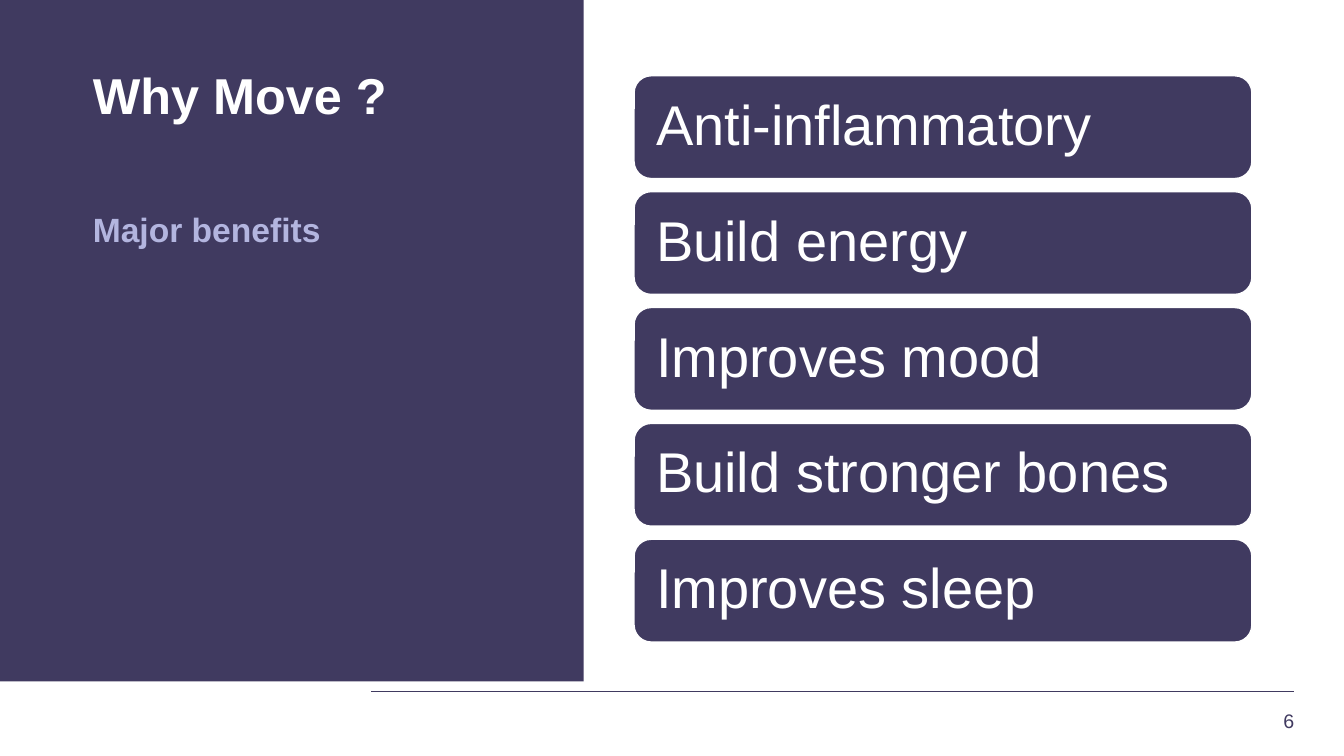
import pptx
import pptx.util
import pptx.dml.color
import pptx.enum.shapes
import pptx.enum.text
import pptx.oxml.ns
import lxml.etree

Cm = pptx.util.Cm
Pt = pptx.util.Pt
ALIGN = pptx.enum.text.PP_ALIGN
ANCHOR = pptx.enum.text.MSO_ANCHOR
SHAPE = pptx.enum.shapes.MSO_SHAPE
PURPLE, LAVENDER, WHITE = "403A60", "B3B5DF", "FFFFFF"
BENEFITS = ["Anti-inflammatory", "Build energy", "Improves mood",
            "Build stronger bones", "Improves sleep"]


def colour(value):
    """Turn a hex string into a colour."""
    return pptx.dml.color.RGBColor.from_string(value)


def write(shape, text, size, ink, bold=False, align=ALIGN.LEFT,
          anchor=ANCHOR.TOP, inset=0, spacing=0.9):
    """Put one formatted paragraph into a shape."""
    frame = shape.text_frame
    frame.word_wrap = True
    frame.vertical_anchor = anchor
    frame.margin_left = frame.margin_right = Cm(inset)
    frame.margin_top = frame.margin_bottom = Cm(inset)
    para = frame.paragraphs[0]
    para.alignment = align
    para.line_spacing = spacing
    span = para.add_run()
    span.text = text
    span.font.name = "Arial"
    span.font.size = Pt(size)
    span.font.bold = bold
    span.font.color.rgb = colour(ink)


def add_text(page, left, top, width, height, text, **style):
    """Add a text box."""
    box = page.shapes.add_textbox(Cm(left), Cm(top), Cm(width), Cm(height))
    write(box, text, **style)


def add_block(page, kind, left, top, width, height, edge=None):
    """Add a purple shape, outlined if an edge colour is given."""
    block = page.shapes.add_shape(kind, Cm(left), Cm(top), Cm(width), Cm(height))
    block.shadow.inherit = False
    block.fill.solid()
    block.fill.fore_color.rgb = colour(PURPLE)
    if edge:
        block.line.color.rgb = colour(edge)
        block.line.width = Pt(1)
    else:
        block.line.fill.background()
    return block


def title_panel(page, left, top, width, height):
    """Draw the dark panel with the title and subtitle."""
    add_block(page, SHAPE.RECTANGLE, left, top, width, height)
    text_left, text_width = left + 2.34, width - 3.79
    add_text(page, text_left, top + 1.8, text_width, 2.84, "Why Move ?",
             size=36, ink=WHITE, bold=True)
    add_text(page, text_left, top + 5.38, text_width, 10.9, "Major benefits",
             size=24, ink=LAVENDER, bold=True)


def benefit_list(page, left, top, width, height, gap=0.33):
    """Stack the benefit cards evenly in the given box."""
    card_height = (height + gap) / len(BENEFITS) - gap
    for index, benefit in enumerate(BENEFITS):
        card = add_block(page, SHAPE.ROUNDED_RECTANGLE, left,
                         top + index * (card_height + gap), width, card_height,
                         edge=WHITE)
        write(card, benefit, size=40, ink=WHITE, anchor=ANCHOR.MIDDLE, inset=0.43)


def footer(page, left, top, width, height):
    """Draw the footer rule and the page number."""
    rule = page.shapes.add_connector(pptx.enum.shapes.MSO_CONNECTOR.STRAIGHT,
                                     Cm(left), Cm(top), Cm(left + width), Cm(top))
    rule.line.color.rgb = colour(PURPLE)
    rule.line.width = Pt(1)
    lxml.etree.SubElement(rule._element.spPr, pptx.oxml.ns.qn("a:effectLst"))
    number_width, number_height = 1.07, 1.02
    add_text(page, left + width - number_width, top + height - number_height,
             number_width, number_height, "6", size=14, ink=PURPLE,
             align=ALIGN.RIGHT, anchor=ANCHOR.MIDDLE, spacing=1.0)


def main():
    """Build and save the deck."""
    deck = pptx.Presentation()
    deck.slide_width, deck.slide_height = Cm(33.87), Cm(19.05)
    page = deck.slides.add_slide(deck.slide_layouts[6])
    footer(page, 9.35, 17.42, 23.27, 1.25)
    title_panel(page, 0, 0, 14.71, 17.17)
    benefit_list(page, 15.98, 1.91, 15.57, 14.27)
    deck.save("out.pptx")


if __name__ == "__main__":
    main()
